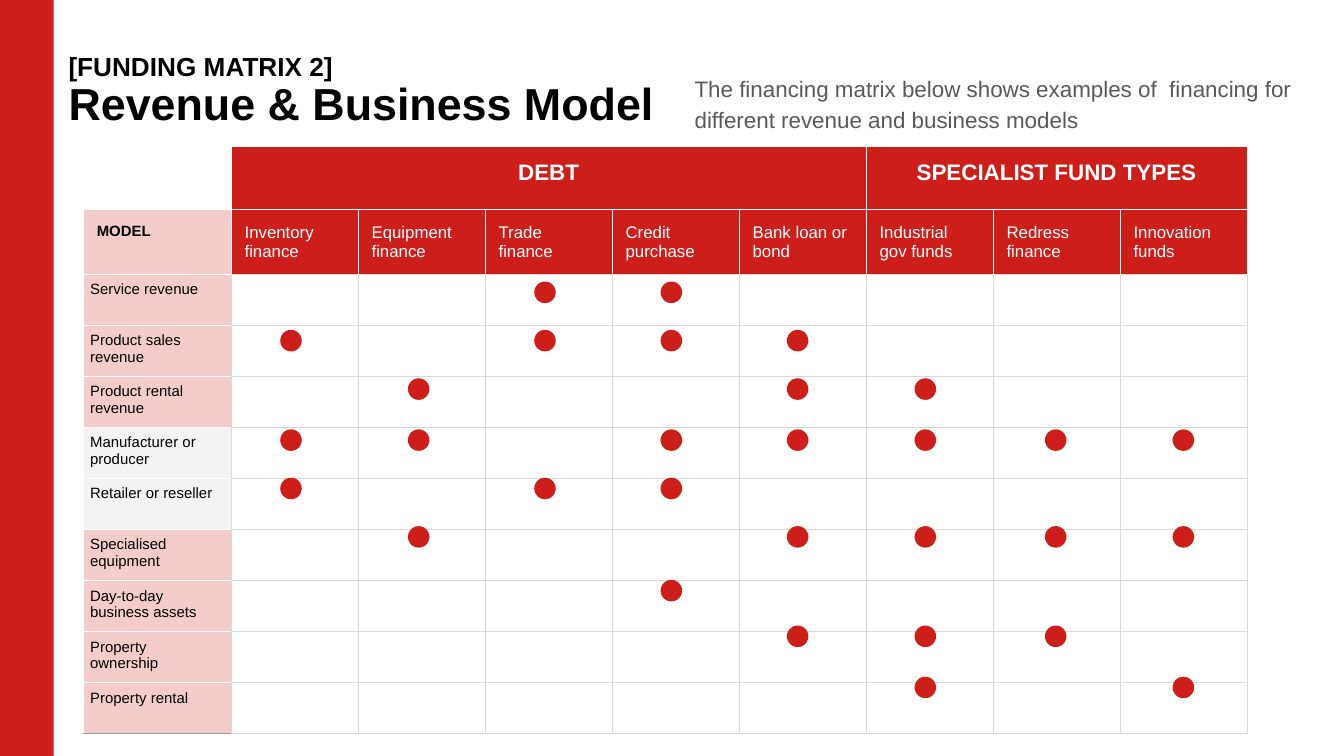
from lxml import etree
from pptx import Presentation
from pptx.dml.color import RGBColor
from pptx.enum import shapes, text
from pptx.oxml import ns
from pptx.util import Inches, Pt

RED, PINK, PALE, WHITE = "CD1E19", "F4CCCC", "F3F3F3", "FFFFFF"
GRID, DARK, BLACK, BODY = "D9D9D9", "9E9E9E", "000000", "595959"

TITLE = [("[FUNDING MATRIX 2]", 14), ("Revenue & Business Model", 24)]
INTRO = ("The financing matrix below shows examples of  financing for "
         "different revenue and business models")
GROUPS = [("DEBT", 1, 5), ("SPECIALIST FUND TYPES", 6, 8)]
HEADS = ["Inventory finance", "Equipment finance", "Trade finance",
         "Credit purchase", "Bank loan or bond", "Industrial  gov funds",
         "Redress finance", "Innovation funds"]
# label, label fill, top of the dots, one mark per finance type
MODELS = [
    ("Service revenue", PINK, 2.10, "..xx...."),
    ("Product sales revenue", PINK, 2.46, "x.xxx..."),
    ("Product rental revenue", PINK, 2.82, ".x..xx.."),
    ("Manufacturer or producer", PALE, 3.20, "xx.xxxxx"),
    ("Retailer or reseller", PALE, 3.56, "x.xx...."),
    ("Specialised equipment", PINK, 3.92, ".x..xxxx"),
    ("Day-to-day business assets", PINK, 4.32, "...x...."),
    ("Property ownership", PINK, 4.66, "....xxx."),
    ("Property rental", PINK, 5.04, ".....x.x"),
]
DOT_X = [2.09, 3.04, 3.98, 4.92, 5.86, 6.81, 7.78, 8.73]
DOT = 0.15
WIDE, HIGH = 10, 10 * 9 / 16
COLS = [1.1] + [7.56 / len(HEADS)] * len(HEADS)
ROWS = [0.47, 0.48] + [0.38] * len(MODELS)


def rgb(code):
    return RGBColor.from_string(code)


def write(para, words, size, color, bold=False):
    run = para.add_run()
    run.text = words
    run.font.color.rgb = rgb(color)
    for key, val in dict(name="Arial", size=Pt(size), bold=bold).items():
        setattr(run.font, key, val)


def pad(item, left, top, right, low):
    """Set the text insets of a cell or text frame."""
    sides = dict(left=left, top=top, right=right, bottom=low)
    for side, val in sides.items():
        setattr(item, "margin_" + side, Inches(val))


def place(shape, *box):
    for key, val in zip(("left", "top", "width", "height"), box):
        setattr(shape, key, Inches(val))


def frame(shape):
    area = shape.text_frame
    area.word_wrap = True
    area.vertical_anchor = text.MSO_ANCHOR.TOP
    pad(area, 0.1, 0.1, 0.1, 0.1)
    return area


def draw(kind, color, *box):
    shape = slide.shapes.add_shape(kind, *map(Inches, box))
    shape.shadow.inherit = False
    shape.fill.solid()
    shape.fill.fore_color.rgb = rgb(color)
    shape.line.color.rgb = rgb(color)
    shape.line.width = Pt(0.75)
    return shape


def paint(cell, color, edges):
    """Fill a cell and colour its edges, given in the order L, R, T, B."""
    cell.fill.solid()
    cell.fill.fore_color.rgb = rgb(color)
    props = cell._tc.get_or_add_tcPr()
    for spot, (side, edge) in enumerate(zip("LRTB", edges)):
        line = etree.Element(ns.qn("a:ln" + side), w=str(Pt(0.75)))
        fill = etree.SubElement(line, ns.qn("a:solidFill"))
        etree.SubElement(fill, ns.qn("a:srgbClr"), val=edge)
        props.insert(spot, line)


deck = Presentation()
deck.slide_width, deck.slide_height = Inches(WIDE), Inches(HIGH)
slide = deck.slides.add_slide(deck.slide_layouts[5])

bar = draw(shapes.MSO_SHAPE.RECTANGLE, RED, 0, 0, 0.4, HIGH)
bar.line.fill.background()

title = slide.shapes.title
place(title, 0.41, 0.3, 6.98, 0.79)
area = frame(title)
for spot, (words, size) in enumerate(TITLE):
    para = area.add_paragraph() if spot else area.paragraphs[0]
    para.alignment = text.PP_ALIGN.LEFT
    para.line_spacing = 0.9
    para.space_before = Pt(0)
    write(para, words, size, BLACK, True)

intro = slide.shapes.add_textbox(*map(Inches, (5.07, 0.43, 4.93, 0.52)))
para = frame(intro).paragraphs[0]
para.line_spacing = 1.15
para.space_after = Pt(12)
write(para, INTRO, 12, BODY)

grid = slide.shapes.add_table(
    len(ROWS), len(COLS), Inches(0.62), Inches(1.09),
    Inches(sum(COLS)), Inches(sum(ROWS))).table
grid.first_row = grid.horz_banding = False
for col, width in zip(grid.columns, COLS):
    col.width = Inches(width)
for row, height in zip(grid.rows, ROWS):
    row.height = Inches(height)

paint(grid.cell(0, 0), WHITE, [WHITE] * 4)
for words, first, last in GROUPS:
    for col in range(first, last + 1):
        paint(grid.cell(0, col), RED, [WHITE] * 4)
    cell = grid.cell(0, first)
    cell.merge(grid.cell(0, last))
    pad(cell, 0.1, 0.1, 0.1, 0.1)
    para = cell.text_frame.paragraphs[0]
    para.alignment = text.PP_ALIGN.CENTER
    write(para, words, 12, WHITE, True)

for col, words in enumerate(["MODEL"] + HEADS):
    cell = grid.cell(1, col)
    pad(cell, 0.1, 0.1, 0.1, 0.08)
    look = (9, WHITE) if col else (8, BLACK, True)
    write(cell.text_frame.paragraphs[0], words, *look)
    paint(cell, RED if col else PINK,
          [WHITE] * 3 + [GRID if col else WHITE])

for row, (words, color, top, marks) in enumerate(MODELS, 2):
    cell = grid.cell(row, 0)
    pad(cell, 0.05, 0.05, 0.1, 0.05)
    write(cell.text_frame.paragraphs[0], words, 8, BLACK)
    low = DARK if row == len(ROWS) - 1 else WHITE
    paint(cell, color, [WHITE, GRID, WHITE, low])
    for col, (left, mark) in enumerate(zip(DOT_X, marks), 1):
        cell = grid.cell(row, col)
        pad(cell, 0, 0, 0, 0)
        paint(cell, WHITE, [GRID] * 4)
        if mark == "x":
            draw(shapes.MSO_SHAPE.OVAL, RED, left, top, DOT, DOT)

deck.save("out.pptx")
